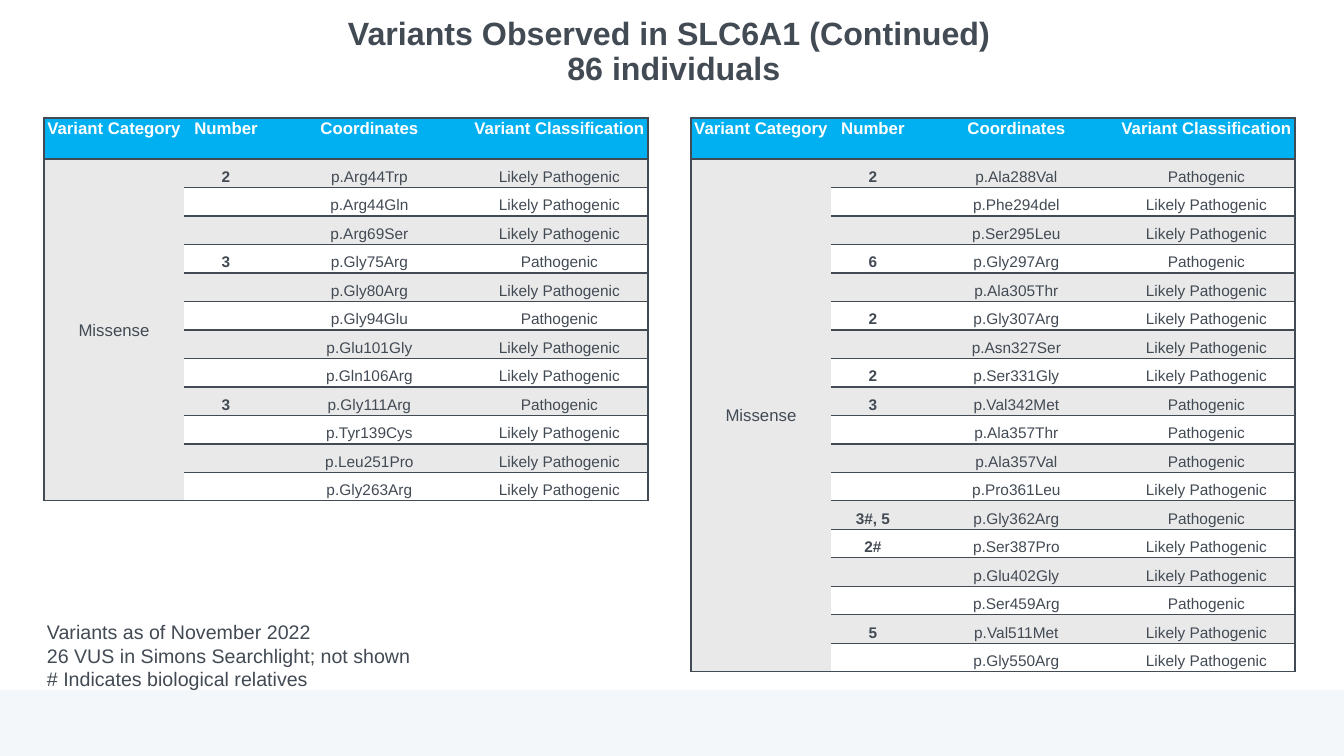
from dataclasses import dataclass

from lxml import etree
from pptx import Presentation
from pptx import util as u
from pptx.dml.color import RGBColor
from pptx.enum import shapes, text
from pptx.oxml.ns import qn


@dataclass(frozen=True)
class Theme:
    font: str = "Arial"
    ink: str = "424A54"
    white: str = "FFFFFF"
    header: str = "00B0F0"
    stripe: str = "E9E9E9"
    footer: str = "F4F7F9"
    title_size: int = 23
    caption_size: int = 14
    header_size: int = 12
    body_size: int = 11


HEADINGS = ["Variant Category", "Number", "Coordinates", "Variant Classification"]
COLUMN_WIDTHS = [140, 84, 203, 177]
HEADER_HEIGHT = 41
PATHOGENIC, LIKELY = "Pathogenic", "Likely Pathogenic"

EARLY_VARIANTS = [
    ("2", "p.Arg44Trp", LIKELY),
    ("", "p.Arg44Gln", LIKELY),
    ("", "p.Arg69Ser", LIKELY),
    ("3", "p.Gly75Arg", PATHOGENIC),
    ("", "p.Gly80Arg", LIKELY),
    ("", "p.Gly94Glu", PATHOGENIC),
    ("", "p.Glu101Gly", LIKELY),
    ("", "p.Gln106Arg", LIKELY),
    ("3", "p.Gly111Arg", PATHOGENIC),
    ("", "p.Tyr139Cys", LIKELY),
    ("", "p.Leu251Pro", LIKELY),
    ("", "p.Gly263Arg", LIKELY),
]
LATE_VARIANTS = [
    ("2", "p.Ala288Val", PATHOGENIC),
    ("", "p.Phe294del", LIKELY),
    ("", "p.Ser295Leu", LIKELY),
    ("6", "p.Gly297Arg", PATHOGENIC),
    ("", "p.Ala305Thr", LIKELY),
    ("2", "p.Gly307Arg", LIKELY),
    ("", "p.Asn327Ser", LIKELY),
    ("2", "p.Ser331Gly", LIKELY),
    ("3", "p.Val342Met", PATHOGENIC),
    ("", "p.Ala357Thr", PATHOGENIC),
    ("", "p.Ala357Val", PATHOGENIC),
    ("", "p.Pro361Leu", LIKELY),
    ("3#, 5", "p.Gly362Arg", PATHOGENIC),
    ("2#", "p.Ser387Pro", LIKELY),
    ("", "p.Glu402Gly", LIKELY),
    ("", "p.Ser459Arg", PATHOGENIC),
    ("5", "p.Val511Met", LIKELY),
    ("", "p.Gly550Arg", LIKELY),
]


def px(length):
    return u.Emu(round(length * 914400 / 100.8))


class VariantSlide:
    def __init__(self, slide, theme):
        self.slide = slide
        self.theme = theme

    def band(self, left, top, width, height, color):
        band = self.slide.shapes.add_shape(
            shapes.MSO_SHAPE.RECTANGLE, px(left), px(top), px(width), px(height))
        band.shadow.inherit = False
        band.fill.solid()
        band.fill.fore_color.rgb = RGBColor.from_string(color)
        band.line.fill.background()

    def run(self, paragraph, words, size, color, bold=False):
        run = paragraph.add_run()
        run.text = words
        run.font.name = self.theme.font
        run.font.size = u.Pt(size)
        run.font.bold = bold
        run.font.color.rgb = RGBColor.from_string(color)

    def text_frame(self, left, top, width, height):
        frame = self.slide.shapes.add_textbox(
            px(left), px(top), px(width), px(height)).text_frame
        frame.word_wrap = True
        return frame

    def title(self, left, top, width, height, lines):
        frame = self.text_frame(left, top, width, height)
        frame.margin_left = frame.margin_right = frame.margin_top = frame.margin_bottom = 0
        paragraph = frame.paragraphs[0]
        paragraph.alignment = text.PP_ALIGN.CENTER
        paragraph.line_spacing = 0.9
        for index, line in enumerate(lines):
            if index:
                paragraph.add_line_break()
            self.run(paragraph, line, self.theme.title_size, self.theme.ink, True)

    def caption(self, left, top, width, height, lines):
        frame = self.text_frame(left, top, width, height)
        frame.auto_size = text.MSO_AUTO_SIZE.SHAPE_TO_FIT_TEXT
        for index, line in enumerate(lines):
            paragraph = frame.add_paragraph() if index else frame.paragraphs[0]
            self.run(paragraph, line, self.theme.caption_size, self.theme.ink)

    def borders(self, cell, ruled_sides):
        """Rule the given sides (of L, R, T, B) and clear the others."""
        properties = cell._tc.get_or_add_tcPr()
        for side in "LRTB":
            line = etree.SubElement(properties, qn(f"a:ln{side}"), w=str(u.Pt(1)))
            if side in ruled_sides:
                fill = etree.SubElement(line, qn("a:solidFill"))
                etree.SubElement(fill, qn("a:srgbClr"), val=self.theme.ink)
            else:
                etree.SubElement(line, qn("a:noFill"))

    def cell(self, cell, words, fill, size, color, bold, anchor, margins, spacing, sides):
        self.borders(cell, sides)
        cell.fill.solid()
        cell.fill.fore_color.rgb = RGBColor.from_string(fill)
        cell.vertical_anchor = anchor
        (cell.margin_left, cell.margin_top,
         cell.margin_right, cell.margin_bottom) = map(px, margins)
        paragraph = cell.text_frame.paragraphs[0]
        paragraph.alignment = text.PP_ALIGN.CENTER
        paragraph.line_spacing = spacing
        if words:
            self.run(paragraph, words, size, color, bold)
        else:
            # An empty cell needs its own type size, or its row grows.
            etree.SubElement(paragraph._p, qn("a:endParaRPr"), sz=str(size * 100))

    def variant_table(self, left, top, height, category, variants):
        theme, anchors = self.theme, text.MSO_ANCHOR
        table = self.slide.shapes.add_table(
            len(variants) + 1, len(HEADINGS), px(left), px(top),
            px(sum(COLUMN_WIDTHS)), px(height)).table
        for column, width in zip(table.columns, COLUMN_WIDTHS):
            column.width = px(width)
        for index, row in enumerate(table.rows):
            row.height = px((height - HEADER_HEIGHT) / len(variants) if index else HEADER_HEIGHT)

        table.cell(1, 0).merge(table.cell(len(variants), 0))
        last = len(HEADINGS) - 1
        rows = [HEADINGS] + [("", *variant) for variant in variants]
        rows[1] = (category, *variants[0])
        for r, row in enumerate(rows):
            for c, words in enumerate(row):
                sides = "TB" + ("L" if c == 0 else "R" if c == last else "")
                if r == 0:
                    style = (theme.header, theme.header_size, theme.white, True,
                             anchors.TOP, (1, 1, 1, 0), 1.0)
                elif c == 0:
                    size = theme.header_size if words else theme.body_size
                    style = (theme.stripe, size, theme.ink, False,
                             anchors.MIDDLE, (1, 1, 1, 0), 1.0)
                else:
                    style = (theme.stripe if r % 2 else theme.white, theme.body_size,
                             theme.ink, c == 1, anchors.BOTTOM, (3, 2, 3, 2), 1.15)
                self.cell(table.cell(r, c), words, *style, sides)


def main():
    deck = Presentation()
    deck.slide_width, deck.slide_height = px(1344), px(756)
    theme = Theme()
    page = VariantSlide(deck.slides.add_slide(deck.slide_layouts[6]), theme)
    page.band(0, 690, 1344, 66, theme.footer)
    page.caption(37, 615, 420, 82, [
        "Variants as of November 2022",
        "26 VUS in Simons Searchlight; not shown",
        "# Indicates biological relatives",
    ])
    page.title(44, 18, 1251, 87,
               ["Variants Observed in SLC6A1 (Continued)", " 86 individuals"])
    page.variant_table(44, 118, 383, "Missense", EARLY_VARIANTS)
    page.variant_table(691, 118, 554, "Missense", LATE_VARIANTS)
    deck.save("out.pptx")


if __name__ == "__main__":
    main()
